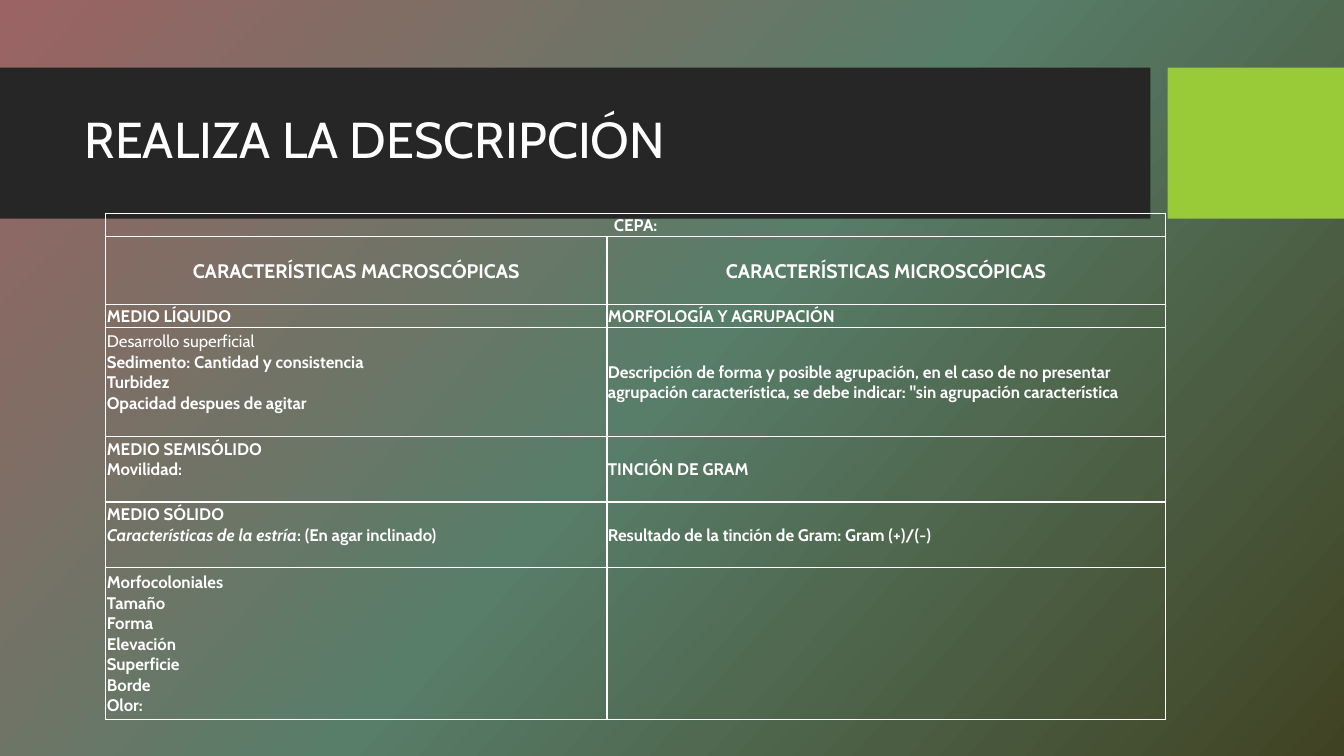
from copy import deepcopy

from lxml import etree
from pptx import Presentation
from pptx import util as u
from pptx.dml.color import RGBColor
from pptx.enum import shapes, text
from pptx.oxml.ns import qn

WIDTH, HEIGHT = 13.33, 7.5
FONT, WHITE = "Cabin", "FFFFFF"
LINE_GAP = 0.2  # room kept under lists that sit above the middle of their cell
COLUMNS = [4.97, 5.54]
ROWS = [0.23, 0.67, 0.23, 1.08, 0.65, 0.65, 1.51]

# Each cell is a list of lines; each line is a list of (words, format) spans.
HEADINGS = [("CARACTERÍSTICAS MACROSCÓPICAS", "CARACTERÍSTICAS MICROSCÓPICAS")]
DETAILS = [
    ([[("MEDIO LÍQUIDO", {})]], [[("MORFOLOGÍA Y AGRUPACIÓN", {})]]),
    ([[("Desarrollo superficial", {"bold": False})],
      [("Sedimento: Cantidad y consistencia", {})],
      [("Turbidez", {})],
      [("Opacidad despues de agitar", {})]],
     [[("Descripción de forma y posible agrupación, en el caso de no presentar "
        "agrupación característica, se debe indicar: \"sin agrupación característica", {})]]),
    ([[("MEDIO SEMISÓLIDO", {})], [("Movilidad:", {})]],
     [[("TINCIÓN DE GRAM", {})]]),
    ([[("MEDIO SÓLIDO", {})],
      [("Características de la estría", {"italic": True}), (": (En agar inclinado)", {})]],
     [[("Resultado de la tinción de Gram: Gram (+)/(-)", {})]]),
    ([[(word, {})] for word in ("Morfocoloniales", "Tamaño", "Forma", "Elevación",
                                "Superficie", "Borde", "Olor:")], []),
]
RAISED_ROWS = (3, 4, 5)


def color(hex_code):
    return RGBColor.from_string(hex_code)


def add_span(para, words, size=12, bold=True, italic=False):
    span = para.add_run()
    span.text = words
    span.font.name, span.font.size = FONT, u.Pt(size)
    span.font.bold, span.font.italic = bold, italic
    span.font.color.rgb = color(WHITE)


def paint_background(page):
    fill = page.background.fill
    fill.gradient()
    fill.gradient_angle = 318
    stop_list = page.element.find(".//" + qn("a:gsLst"))
    stop_list.append(deepcopy(stop_list[-1]))
    for stop, position, shade in zip(fill.gradient_stops, (0, 0.5, 1),
                                     ("9B6363", "587D69", "404323")):
        stop.position = position
        stop.color.rgb = color(shade)


def add_block(page, left, top, width, height, shade):
    block = page.shapes.add_shape(shapes.MSO_SHAPE.RECTANGLE, u.Inches(left), u.Inches(top),
                                  u.Inches(width), u.Inches(height))
    block.shadow.inherit = False
    block.fill.solid()
    block.fill.fore_color.rgb = color(shade)
    block.line.fill.background()


def add_header(page, top, height):
    """Dark band with the title, and the green block at its right."""
    add_block(page, 0, top, 11.41, height, "262626")
    add_block(page, 11.58, top, WIDTH - 11.58, height, "99CB38")
    title = page.shapes.title
    title.element.getparent().append(title.element)  # in front of the band
    title.left, title.top = u.Inches(0.74), u.Inches(top + 0.15)
    title.width, title.height = u.Inches(10.51), u.Inches(1.18)
    title.text_frame.vertical_anchor = text.MSO_ANCHOR.MIDDLE
    para = title.text_frame.paragraphs[0]
    para.alignment, para.line_spacing = text.PP_ALIGN.LEFT, 0.9
    add_span(para, "REALIZA LA DESCRIPCIÓN", size=36, bold=False)


def style_cell(cell):
    cell.margin_left = cell.margin_right = cell.margin_top = u.Inches(0.01)
    cell.margin_bottom = 0
    cell.vertical_anchor = text.MSO_ANCHOR.MIDDLE
    properties = cell._tc.get_or_add_tcPr()
    for side in ("lnL", "lnR", "lnT", "lnB"):
        border = etree.SubElement(properties, qn("a:" + side), w=str(u.Pt(1)))
        paint = etree.SubElement(border, qn("a:solidFill"))
        etree.SubElement(paint, qn("a:srgbClr"), val=WHITE)
    cell.fill.background()


def fill_cell(cell, lines, align=text.PP_ALIGN.LEFT):
    frame = cell.text_frame
    for index, line in enumerate(lines):
        para = frame.add_paragraph() if index else frame.paragraphs[0]
        para.alignment = align
        for words, look in line:
            add_span(para, words, **look)


def add_description_table(page, left, top):
    frame = page.shapes.add_table(len(ROWS), len(COLUMNS), u.Inches(left), u.Inches(top),
                                  u.Inches(sum(COLUMNS)), u.Inches(sum(ROWS)))
    table = frame.table
    table.first_row = table.horz_banding = False
    for column, width in zip(table.columns, COLUMNS):
        column.width = u.Inches(width)
    for row, height in zip(table.rows, ROWS):
        row.height = u.Inches(height)
    for cell in table.iter_cells():
        style_cell(cell)

    center = text.PP_ALIGN.CENTER
    table.cell(0, 0).merge(table.cell(0, 1))
    fill_cell(table.cell(0, 0), [[("CEPA:", {})]], center)
    for row, headings in enumerate(HEADINGS, 1):
        for column, heading in enumerate(headings):
            fill_cell(table.cell(row, column), [[(heading, {"size": 14})]], center)
    for row, details in enumerate(DETAILS, 2):
        for column, lines in enumerate(details):
            fill_cell(table.cell(row, column), lines)
    for row in RAISED_ROWS:
        table.cell(row, 0).margin_bottom = u.Inches(LINE_GAP)


def main():
    deck = Presentation()
    deck.slide_width, deck.slide_height = u.Inches(WIDTH), u.Inches(HEIGHT)
    page = deck.slides.add_slide(deck.slide_layouts[5])
    paint_background(page)
    add_header(page, top=0.67, height=1.5)
    add_description_table(page, left=1.05, top=2.12)
    deck.save("out.pptx")


if __name__ == "__main__":
    main()
